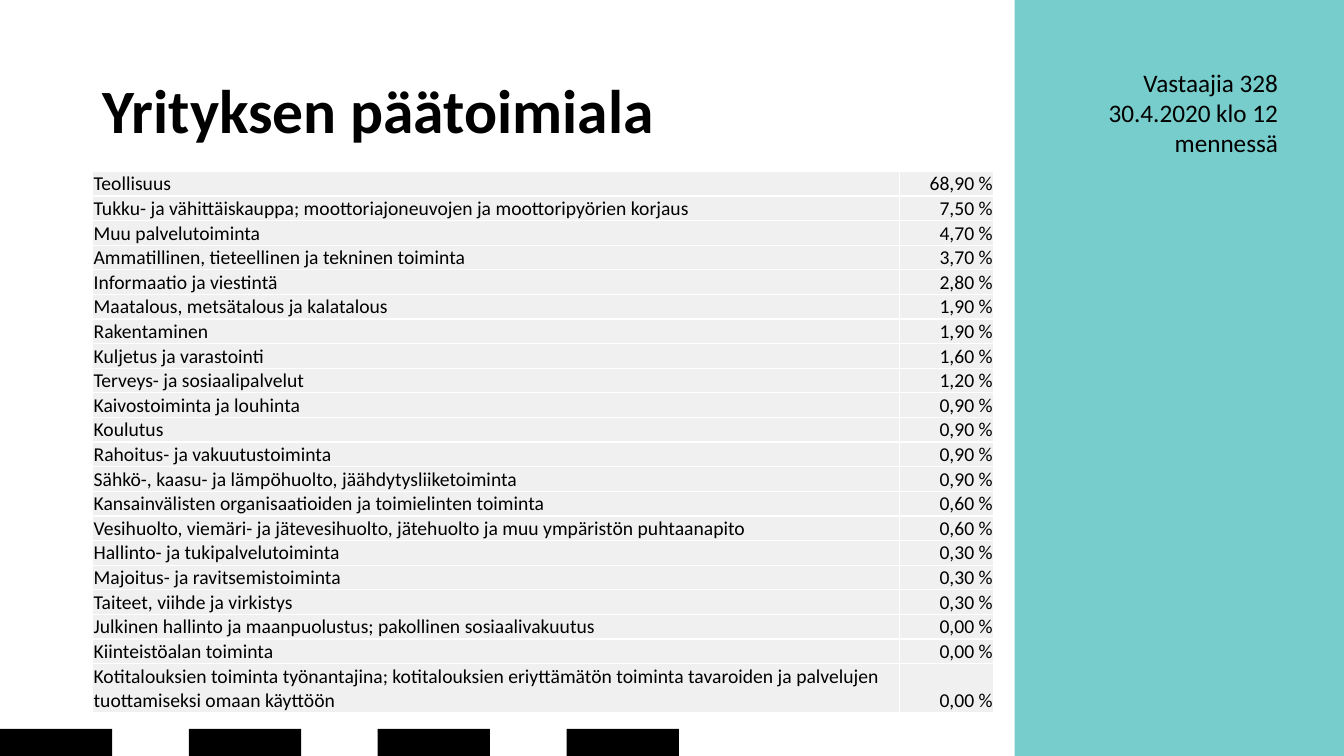
from lxml import etree
from pptx import Presentation
from pptx.dml.color import RGBColor
from pptx.enum.shapes import MSO_SHAPE
from pptx.enum.text import MSO_ANCHOR, PP_ALIGN
from pptx.oxml.ns import qn
from pptx.util import Cm, Pt

RECT = MSO_SHAPE.RECTANGLE
LEFT, RIGHT = PP_ALIGN.LEFT, PP_ALIGN.RIGHT
TOP, MIDDLE, BOTTOM = MSO_ANCHOR.TOP, MSO_ANCHOR.MIDDLE, MSO_ANCHOR.BOTTOM

# Content
TITLE = "Yrityksen päätoimiala"
RESPONDENTS = ["Vastaajia 328", "30.4.2020 klo 12 mennessä"]
INDUSTRIES = [
    ("Teollisuus", "68,90 %"),
    ("Tukku- ja vähittäiskauppa; moottoriajoneuvojen ja moottoripyörien korjaus", "7,50 %"),
    ("Muu palvelutoiminta", "4,70 %"),
    ("Ammatillinen, tieteellinen ja tekninen toiminta", "3,70 %"),
    ("Informaatio ja viestintä", "2,80 %"),
    ("Maatalous, metsätalous ja kalatalous", "1,90 %"),
    ("Rakentaminen", "1,90 %"),
    ("Kuljetus ja varastointi", "1,60 %"),
    ("Terveys- ja sosiaalipalvelut", "1,20 %"),
    ("Kaivostoiminta ja louhinta", "0,90 %"),
    ("Koulutus", "0,90 %"),
    ("Rahoitus- ja vakuutustoiminta", "0,90 %"),
    ("Sähkö-, kaasu- ja lämpöhuolto, jäähdytysliiketoiminta", "0,90 %"),
    ("Kansainvälisten organisaatioiden ja toimielinten toiminta", "0,60 %"),
    ("Vesihuolto, viemäri- ja jätevesihuolto, jätehuolto ja muu ympäristön puhtaanapito",
     "0,60 %"),
    ("Hallinto- ja tukipalvelutoiminta", "0,30 %"),
    ("Majoitus- ja ravitsemistoiminta", "0,30 %"),
    ("Taiteet, viihde ja virkistys", "0,30 %"),
    ("Julkinen hallinto ja maanpuolustus; pakollinen sosiaalivakuutus", "0,00 %"),
    ("Kiinteistöalan toiminta", "0,00 %"),
    ("Kotitalouksien toiminta työnantajina; kotitalouksien eriyttämätön toiminta "
     "tavaroiden ja palvelujen tuottamiseksi omaan käyttöön", "0,00 %"),
]

# Style
FONT = "Calibri"
BLACK = RGBColor(0x00, 0x00, 0x00)
WHITE = RGBColor(0xFF, 0xFF, 0xFF)
TEAL = RGBColor(0x77, 0xCD, 0xCB)
GREY = RGBColor(0xF0, 0xF0, 0xF0)

# Layout in centimetres
SLIDE_W, SLIDE_H = 33.87, 19.05
PANEL_X = 25.57
BLOCK_W, BLOCK_H, BLOCK_STEP, BLOCK_COUNT = 2.83, 0.68, 4.76, 4
TABLE_X, TABLE_Y = 2.34, 4.32
COLUMNS = (20.33, 2.37)
ROW_H, LAST_ROW_H = 0.62, 1.23


def add_bar(slide, x, y, w, h, color):
    s = slide.shapes.add_shape(RECT, Cm(x), Cm(y), Cm(w), Cm(h))
    s.shadow.inherit = False
    s.fill.solid()
    s.fill.fore_color.rgb = color
    s.line.fill.background()


def write(tf, lines, size, align=LEFT, bold=False, spacing=None):
    for i, line in enumerate(lines):
        p = tf.add_paragraph() if i else tf.paragraphs[0]
        p.alignment = align
        if spacing:
            p.line_spacing = spacing
        r = p.add_run()
        r.text = line
        r.font.name = FONT
        r.font.size = Pt(size)
        r.font.bold = bold
        r.font.color.rgb = BLACK


def add_text(slide, x, y, w, h, lines, size, anchor=TOP, **style):
    tf = slide.shapes.add_textbox(Cm(x), Cm(y), Cm(w), Cm(h)).text_frame
    tf.word_wrap = True
    tf.vertical_anchor = anchor
    write(tf, lines, size, **style)


def add_borders(cell):
    tc_pr = cell._tc.get_or_add_tcPr()
    for side in ("a:lnL", "a:lnR", "a:lnT", "a:lnB"):
        ln = etree.SubElement(tc_pr, qn(side), w=str(Pt(1)))
        fill = etree.SubElement(ln, qn("a:solidFill"))
        etree.SubElement(fill, qn("a:srgbClr"), val=str(WHITE))


def fill_cell(cell, text, align):
    add_borders(cell)
    cell.fill.solid()
    cell.fill.fore_color.rgb = GREY
    cell.margin_left = cell.margin_right = cell.margin_top = Cm(0.02)
    cell.margin_bottom = 0
    cell.vertical_anchor = BOTTOM
    write(cell.text_frame, [text], 14, align)


prs = Presentation()
prs.slide_width, prs.slide_height = Cm(SLIDE_W), Cm(SLIDE_H)
slide = prs.slides.add_slide(prs.slide_layouts[6])

# Side panel and row of blocks along the bottom
add_bar(slide, PANEL_X, 0, SLIDE_W - PANEL_X, SLIDE_H, TEAL)
for i in range(BLOCK_COUNT):
    add_bar(slide, i * BLOCK_STEP, SLIDE_H - BLOCK_H, BLOCK_W, BLOCK_H, BLACK)

# Title
add_text(slide, TABLE_X, 1.01, 29.21, 3.68, [TITLE], 44, MIDDLE, bold=True, spacing=0.9)

# Industry table
heights = [ROW_H] * (len(INDUSTRIES) - 1) + [LAST_ROW_H]
table = slide.shapes.add_table(len(INDUSTRIES), len(COLUMNS), Cm(TABLE_X), Cm(TABLE_Y),
                               Cm(sum(COLUMNS)), Cm(sum(heights))).table
table.first_row = table.horz_banding = False
for column, width in zip(table.columns, COLUMNS):
    column.width = Cm(width)
for row, height, values in zip(table.rows, heights, INDUSTRIES):
    row.height = Cm(height)
    for cell, text, align in zip(row.cells, values, (LEFT, RIGHT)):
        fill_cell(cell, text, align)

# Respondent count
add_text(slide, 27.2, 1.57, 5.26, 2.57, RESPONDENTS, 18, align=RIGHT)

prs.save("out.pptx")
